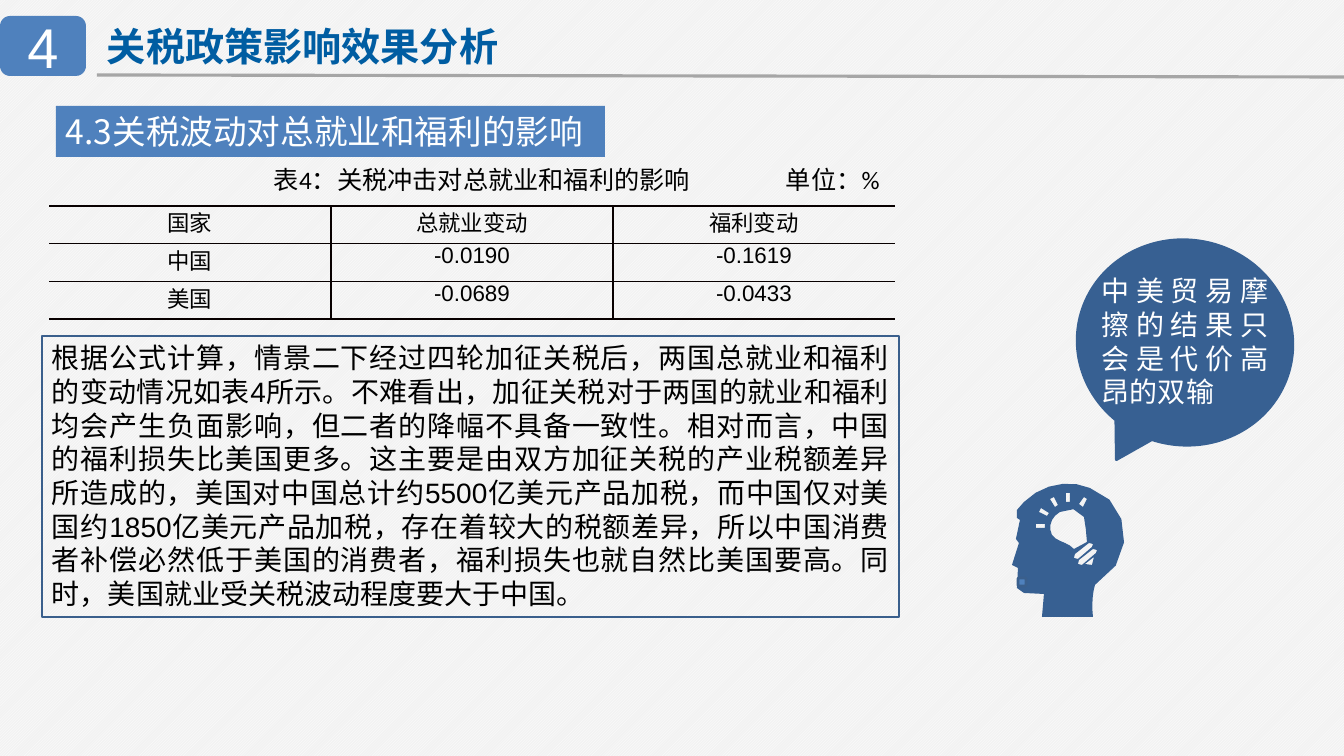
from lxml import etree
from pptx import Presentation, util as u
from pptx.dml.color import RGBColor
from pptx.enum import dml, shapes, text
from pptx.oxml import ns

SCALE = 914400 / 100.8  # EMU per px
THEME = {
    "title": "005DA2", "accent": "4F81BD", "deep": "376092", "frame": "3A5F8C",
    "rule": "A6A6A6", "ink": "000000", "grid": "080000", "white": "FFFFFF", "back": "F2F2F2",
    "cjk": "Noto Sans CJK SC", "latin": "Arial", "plain": "Calibri",
    "badge": 40, "head": 28, "section": 24, "body": 20, "caption": 18, "cell": 16,
}
COLOURS = {name: RGBColor.from_string(THEME[name])
           for name in ("title", "accent", "deep", "frame", "rule", "ink", "grid", "white", "back")}
ALIGN = text.PP_ALIGN


def write(frame, words, size, colour, font, align=ALIGN.LEFT, bold=False, tight=True):
    """Put one styled run in a frame; tight sets lines at 1.2 times the type size."""
    frame.word_wrap = True
    para = frame.paragraphs[0]
    para.alignment = align
    if tight:
        para.line_spacing = u.Pt(THEME[size] * 1.2)
    span = para.add_run()
    span.text = words
    span.font.size, span.font.bold = u.Pt(THEME[size]), bold
    span.font.name = THEME[font]
    span.font.color.rgb = COLOURS[colour]
    east = etree.SubElement(span.font._element, ns.qn("a:ea"))
    east.set("typeface", THEME["cjk"])
    return para


def trace(start, steps):
    """List the points of an outline; a step is a point or a cubic curve of three points."""
    points = [start]
    for step in steps:
        if len(step) == 2:
            points.append(step)
            continue
        (ax, ay), (bx, by, cx, cy, dx, dy) = points[-1], step
        parts = 5 if abs(dx - ax) + abs(dy - ay) > 30 else 2
        for i in range(1, parts + 1):
            t = i / parts
            a, b, c, d = (1 - t) ** 3, 3 * t * (1 - t) ** 2, 3 * t * t * (1 - t), t ** 3
            points.append((a * ax + b * bx + c * cx + d * dx, a * ay + b * by + c * cy + d * dy))
    return points


deck = Presentation()
deck.slide_width, deck.slide_height = round(1344 * SCALE), round(756 * SCALE)
page = deck.slides.add_slide(deck.slide_layouts[6])
backdrop = page.background.fill
backdrop.patterned()
backdrop.pattern = dml.MSO_PATTERN.LIGHT_UPWARD_DIAGONAL
backdrop.fore_color.rgb, backdrop.back_color.rgb = COLOURS["white"], COLOURS["back"]

# Title and rule
title = page.shapes.add_textbox(*[round(v * SCALE) for v in (97, 17, 419, 57)])
write(title.text_frame, "关税政策影响效果分析", "head", "title", "cjk", bold=True)
rule = page.shapes.add_connector(
    shapes.MSO_CONNECTOR.STRAIGHT, *[round(v * SCALE) for v in (97, 75, 1344, 77)])
rule.line.color.rgb, rule.line.width = COLOURS["rule"], u.Pt(2.25)
etree.SubElement(rule._element.spPr, ns.qn("a:effectLst"))

# Preset shapes: kind, box, fill, line
KIND = shapes.MSO_SHAPE
PRESETS = {
    "badge": (KIND.ROUNDED_RECTANGLE, (0, 16, 86, 60), "accent", None),
    "section": (KIND.RECTANGLE, (56, 106, 549, 51), "accent", None),
    "border": (KIND.RECTANGLE, (42, 336, 857, 281), None, "frame"),
    "mouth": (KIND.ROUNDED_RECTANGLE, (1018, 578, 8, 8), "accent", "frame"),
    "callout": (KIND.OVAL_CALLOUT, (1077, 240, 216, 205), "deep", "deep"),
}
placed = {}
for name, (kind, box, fill, line) in PRESETS.items():
    shape = placed[name] = page.shapes.add_shape(kind, *[round(v * SCALE) for v in box])
    shape.shadow.inherit = False
    if fill:
        shape.fill.solid()
        shape.fill.fore_color.rgb = COLOURS[fill]
    else:
        shape.fill.background()
    if line:
        shape.line.color.rgb, shape.line.width = COLOURS[line], u.Pt(2)
    else:
        shape.line.fill.background()
placed["callout"].rotation = 11

write(placed["badge"].text_frame, "4", "badge", "white", "latin", ALIGN.CENTER, tight=False)
write(placed["section"].text_frame, "4.3关税波动对总就业和福利的影响", "section", "white", "cjk")

# Comment inside the border
comment = page.shapes.add_textbox(*[round(v * SCALE) for v in (42, 336, 857, 281)])
write(comment.text_frame,
      "根据公式计算，情景二下经过四轮加征关税后，两国总就业和福利的变动情况如表4所示。"
      "不难看出，加征关税对于两国的就业和福利均会产生负面影响，但二者的降幅不具备一致性。"
      "相对而言，中国的福利损失比美国更多。这主要是由双方加征关税的产业税额差异所造成的，"
      "美国对中国总计约5500亿美元产品加税，而中国仅对美国约1850亿美元产品加税，"
      "存在着较大的税额差异，所以中国消费者补偿必然低于美国的消费者，"
      "福利损失也就自然比美国要高。同时，美国就业受关税波动程度要大于中国。",
      "body", "ink", "latin", ALIGN.JUSTIFY)

# Callout words stay level above the tilted bubble
remark = page.shapes.add_textbox(*[round(v * SCALE) for v in (1092, 269, 186, 146)])
write(remark.text_frame, "中美贸易摩擦的结果只会是代价高昂的双输", "body", "white", "plain", ALIGN.JUSTIFY)

# Table caption, with the unit at a tab stop
caption = page.shapes.add_textbox(*[round(v * SCALE) for v in (56, 159, 839, 40)])
caption.text_frame.margin_left = round(218 * SCALE)
caption.text_frame.margin_right = 0
para = write(caption.text_frame, "表4：关税冲击对总就业和福利的影响\t单位：%", "caption", "ink", "plain")
tabs = etree.SubElement(para._p.get_or_add_pPr(), ns.qn("a:tabLst"))
etree.SubElement(tabs, ns.qn("a:tab"), pos=str(round(512 * SCALE)), algn="l")

# Table with ruled rows and inner column lines
ROWS = [
    ("国家", "总就业变动", "福利变动"),
    ("中国", "-0.0190", "-0.1619"),
    ("美国", "-0.0689", "-0.0433"),
]
grid = page.shapes.add_table(3, 3, *[round(v * SCALE) for v in (49, 206, 846, 113)]).table
grid.first_row = grid.horz_banding = False
for r, row in enumerate(ROWS):
    for c, words in enumerate(row):
        cell = grid.cell(r, c)
        cell.margin_left = cell.margin_right = round(7 * SCALE)
        cell.margin_top = cell.margin_bottom = 0
        write(cell.text_frame, words, "cell", "ink", "latin", ALIGN.CENTER, tight=False)
        props = cell._tc.get_or_add_tcPr()
        for side, ruled in (("L", c > 0), ("R", c < 2), ("T", True), ("B", True)):
            edge = etree.SubElement(props, ns.qn("a:ln" + side), w=str(u.Pt(1)))
            paint = etree.SubElement(edge, ns.qn("a:solidFill" if ruled else "a:noFill"))
            if ruled:
                etree.SubElement(paint, ns.qn("a:srgbClr"), val=THEME["grid"])
        cell.fill.background()

# Head outline, then the cut-outs: bulb, its base, five rays and two threads
outlines = [
    trace((1093, 617), [
        (1092, 607, 1092, 595, 1095, 585), (1141, 558, 1128, 499, 1090, 488),
        (1069, 479, 1042, 484, 1024, 502), (1017, 510), (1017, 518), (1020, 520),
        (1016, 539), (1019, 543), (1012, 565), (1018, 568),
        (1017, 588), (1024, 593), (1044, 594), (1042, 617)]),
    trace((1060, 512), [
        (1068, 507, 1080, 508, 1084, 517), (1089, 525, 1083, 533, 1087, 542), (1074, 549),
        (1068, 542, 1057, 542, 1052, 535), (1048, 527, 1051, 517, 1060, 512)]),
    [(1094, 557), (1092, 565), (1085, 564)],
    [(1045, 528), (1036, 528), (1036, 524), (1045, 524)],
    [(1047, 516), (1039, 512), (1041, 508), (1049, 513)],
    [(1055, 507), (1050, 499), (1054, 497), (1058, 505)],
    [(1066, 502), (1066, 493), (1070, 493), (1070, 502)],
    [(1079, 504), (1084, 497), (1087, 499), (1083, 507)],
]
thread = [(1075, 554), (1089, 543), (1093, 544), (1092, 547), (1078, 559), (1074, 558)]
outlines += [[(x + dx, y + dy) for x, y in thread] for dx, dy in ((0, 0), (4, 6))]

pen = page.shapes.build_freeform(*[round(v * SCALE) for v in outlines[0][0]])
for i, outline in enumerate(outlines):
    points = [(round(x * SCALE), round(y * SCALE)) for x, y in outline]
    if i:
        pen.move_to(*points[0])
    pen.add_line_segments(points[1:], close=True)
head = pen.convert_to_shape()
head.shadow.inherit = False
head.fill.solid()
head.fill.fore_color.rgb = COLOURS["deep"]
head.line.fill.background()

# The mouth lies over the head
page.shapes._spTree.append(placed["mouth"]._element)

deck.save("out.pptx")
